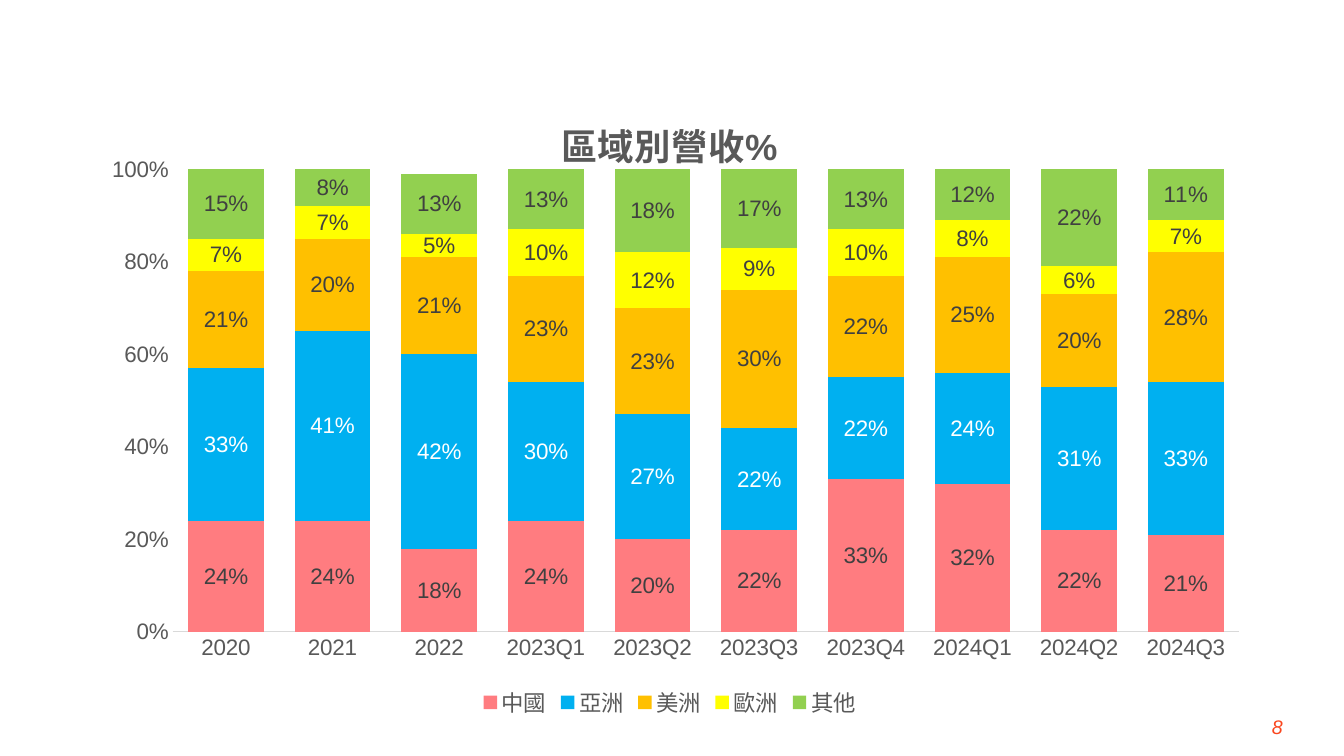
from dataclasses import dataclass

from lxml import etree
from pptx import Presentation
from pptx import util as u
from pptx.chart.data import CategoryChartData
from pptx.dml.color import RGBColor
from pptx.enum import chart as charts
from pptx.enum import text
from pptx.oxml.ns import qn


@dataclass(frozen=True)
class Theme:
    font: str = "Arial"
    body: int = 16
    title: int = 26
    page_number: int = 14
    gray: str = "595959"
    dark: str = "404040"
    white: str = "FFFFFF"
    axis: str = "D9D9D9"
    accent: str = "FA461E"


@dataclass(frozen=True)
class Area:
    """A rectangle in percent of whatever contains it."""
    left: float
    top: float
    width: float
    height: float

    def on_slide(self, deck) -> tuple[int, int, int, int]:
        wide, high = deck.slide_width, deck.slide_height
        shares = zip((self.left, self.top, self.width, self.height), (wide, high) * 2)
        return tuple(round(share * length / 100) for share, length in shares)


@dataclass(frozen=True)
class Region:
    name: str
    percents: tuple[int, ...]
    color: str
    label_color: str


THEME = Theme()
CHART_AREA = Area(5.48, 11.73, 88.67, 83.87)
PLOT_AREA = Area(8.3, 12.7, 89.5, 73)
NUMBER_AREA = Area(90.55, 93.47, 5.63, 5.33)
PERIODS = ("2020", "2021", "2022", "2023Q1", "2023Q2", "2023Q3",
           "2023Q4", "2024Q1", "2024Q2", "2024Q3")
REGIONS = (
    Region("中國", (24, 24, 18, 24, 20, 22, 33, 32, 22, 21), "FF7C80", THEME.dark),
    Region("亞洲", (33, 41, 42, 30, 27, 22, 22, 24, 31, 33), "00B0F0", THEME.white),
    Region("美洲", (21, 20, 21, 23, 23, 30, 22, 25, 20, 28), "FFC000", THEME.dark),
    Region("歐洲", (7, 7, 5, 10, 12, 9, 10, 8, 6, 7), "FFFF00", THEME.dark),
    Region("其他", (15, 8, 13, 13, 18, 17, 13, 12, 22, 11), "92D050", THEME.dark),
)


def format_font(font, *, size: int = THEME.body, color: str = THEME.gray,
                bold: bool = False, italic: bool = False) -> None:
    font.name = THEME.font
    font.size = u.Pt(size)
    font.bold = bold
    font.italic = italic
    font.color.rgb = RGBColor.from_string(color)


def write(frame, words: str, *, align=text.PP_ALIGN.LEFT, **style) -> None:
    para = frame.paragraphs[0]
    para.alignment = align
    span = para.add_run()
    span.text = words
    format_font(span.font, **style)


def place_plot(chart, area: Area) -> None:
    """Fix the inner plot area inside the chart."""
    plot_area = chart.plots[0]._element.getparent()
    for old in plot_area.findall(qn("c:layout")):
        plot_area.remove(old)
    layout = etree.Element(qn("c:layout"))
    plot_area.insert(0, layout)
    manual = etree.SubElement(layout, qn("c:manualLayout"))
    settings = {"layoutTarget": "inner", "xMode": "edge", "yMode": "edge",
                "x": area.left / 100, "y": area.top / 100,
                "w": area.width / 100, "h": area.height / 100}
    for tag, value in settings.items():
        etree.SubElement(manual, qn(f"c:{tag}")).set("val", str(value))


def format_axes(chart) -> None:
    for axis in (chart.category_axis, chart.value_axis):
        axis.has_major_gridlines = False
        axis.major_tick_mark = charts.XL_TICK_MARK.NONE
        axis.minor_tick_mark = charts.XL_TICK_MARK.NONE
        format_font(axis.tick_labels.font)
    line = chart.category_axis.format.line
    line.color.rgb = RGBColor.from_string(THEME.axis)
    line.width = u.Pt(0.75)
    values = chart.value_axis
    values.minimum_scale, values.maximum_scale, values.major_unit = 0, 1, 0.2
    values.tick_labels.number_format = "0%"
    values.tick_labels.number_format_is_linked = False
    values.format.line.fill.background()


def format_region(series, region: Region) -> None:
    series.format.fill.solid()
    series.format.fill.fore_color.rgb = RGBColor.from_string(region.color)
    labels = series.data_labels
    labels.show_value = True
    labels.number_format = "0%"
    labels.number_format_is_linked = False
    labels.position = charts.XL_LABEL_POSITION.CENTER
    format_font(labels.font, color=region.label_color)


def add_revenue_chart(deck, page) -> None:
    data = CategoryChartData(number_format="0%")
    data.categories = PERIODS
    for region in REGIONS:
        data.add_series(region.name, [percent / 100 for percent in region.percents])
    chart = page.shapes.add_chart(charts.XL_CHART_TYPE.COLUMN_STACKED,
                                  *CHART_AREA.on_slide(deck), data).chart
    format_font(chart.font)
    chart.has_title = True
    write(chart.chart_title.text_frame, "區域別營收%", align=text.PP_ALIGN.CENTER,
          size=THEME.title, bold=True)
    chart.chart_title.include_in_layout = False
    chart.has_legend = True
    chart.legend.position = charts.XL_LEGEND_POSITION.BOTTOM
    chart.legend.include_in_layout = False
    format_font(chart.legend.font)
    plot = chart.plots[0]
    plot.vary_by_categories = False
    plot.gap_width, plot.overlap = 41, 100
    for series, region in zip(plot.series, REGIONS):
        format_region(series, region)
    format_axes(chart)
    place_plot(chart, PLOT_AREA)


def add_page_number(deck, page, number: str) -> None:
    box = page.shapes.add_textbox(*NUMBER_AREA.on_slide(deck))
    box.text_frame.word_wrap = True
    box.text_frame.vertical_anchor = text.MSO_ANCHOR.MIDDLE
    write(box.text_frame, number, align=text.PP_ALIGN.RIGHT,
          size=THEME.page_number, color=THEME.accent, italic=True)


def main() -> None:
    deck = Presentation()
    deck.slide_width, deck.slide_height = u.Inches(13.33), u.Inches(7.5)
    page = deck.slides.add_slide(deck.slide_layouts.get_by_name("Blank"))
    add_page_number(deck, page, "8")
    add_revenue_chart(deck, page)
    deck.save("out.pptx")


if __name__ == "__main__":
    main()
